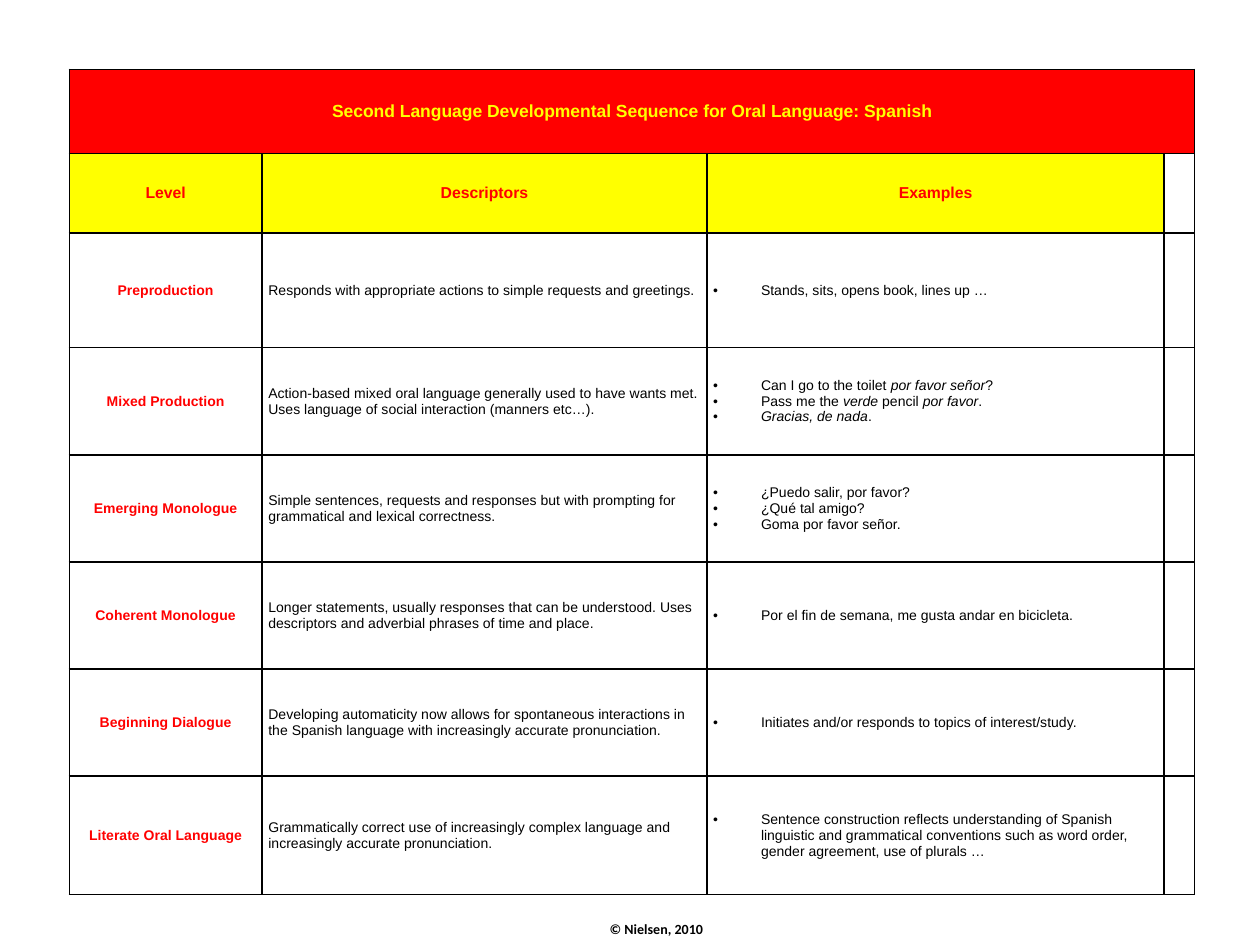
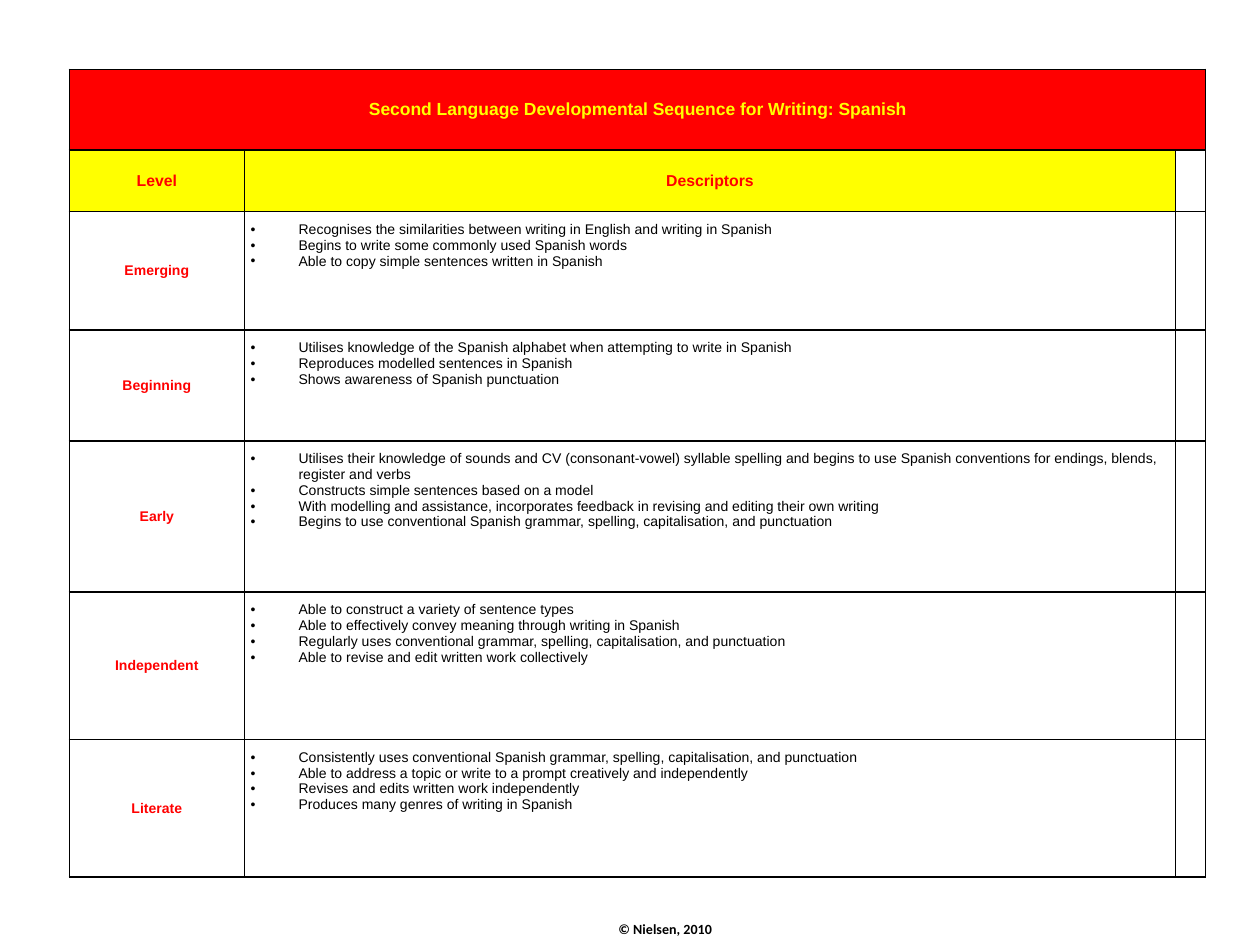
"""Build two slides of developmental sequences for learning Spanish."""
from dataclasses import dataclass

from lxml import etree
from pptx import Presentation
from pptx.dml.color import RGBColor
from pptx.enum.text import MSO_ANCHOR, MSO_AUTO_SIZE, PP_ALIGN
from pptx.oxml.ns import qn
from pptx.slide import Slide
from pptx.table import _Cell
from pptx.text.text import TextFrame
from pptx.util import Emu, Inches, Pt

CENTER, LEFT = PP_ALIGN.CENTER, PP_ALIGN.LEFT
MIDDLE, TOP = MSO_ANCHOR.MIDDLE, MSO_ANCHOR.TOP
FIT_SHAPE = MSO_AUTO_SIZE.SHAPE_TO_FIT_TEXT

SLIDE_WIDTH, SLIDE_HEIGHT = Inches(10), Inches(7.5)
GRID_COLUMNS, GRID_ROWS = 1000, 750
BLANK_LAYOUT = 6
TABLE_LEFT, TABLE_TOP = 55, 55
FOOTER_TOP, FOOTER_WIDTH, FOOTER_HEIGHT = 726, 143, 24
FOOTER_INDENT = 39
CELL_MARGIN, BULLET_INDENT, LIST_TOP = 5, 38, 8
MARGIN_COLUMN = 21
FOOTER = "© Nielsen, 2010"


@dataclass(frozen=True)
class Theme:
    """Colours, fonts and type sizes of the deck."""

    red: RGBColor = RGBColor(0xFF, 0x00, 0x00)
    yellow: RGBColor = RGBColor(0xFF, 0xFF, 0x00)
    black: RGBColor = RGBColor(0x00, 0x00, 0x00)
    table_font: str = "Arial"
    footer_font: str = "Calibri"
    title_size: int = 10
    heading_size: int = 9
    body_size: int = 8
    border_width: int = 1


THEME = Theme()


@dataclass(frozen=True)
class TextStyle:
    """Look of the text in one kind of box or cell."""

    size: int
    color: RGBColor
    bold: bool = True
    font: str = THEME.table_font
    align: PP_ALIGN = CENTER
    bulleted: bool = False


TITLE = TextStyle(THEME.title_size, THEME.yellow)
HEADING = TextStyle(THEME.heading_size, THEME.red)
LEVEL = TextStyle(THEME.body_size, THEME.red)
BODY = TextStyle(THEME.body_size, THEME.black, bold=False, align=LEFT)
BULLETS = TextStyle(THEME.body_size, THEME.black, bold=False, align=LEFT, bulleted=True)
FOOTNOTE = TextStyle(THEME.body_size, THEME.black, font=THEME.footer_font)


@dataclass(frozen=True)
class Level:
    """One table row: its height, name, bullet items and optional description."""

    height: int
    name: str
    items: tuple[str, ...]
    description: str = ""


@dataclass(frozen=True)
class Sequence:
    """One slide: a titled table of levels and a footer."""

    title: str
    headings: tuple[str, ...]
    widths: tuple[int, ...]
    title_height: int
    heading_height: int
    footer_left: int
    list_anchor: MSO_ANCHOR
    levels: tuple[Level, ...]


ORAL = Sequence(
    "Second Language Developmental Sequence for Oral Language: Spanish",
    ("Level", "Descriptors", "Examples"), (153, 353, 363, MARGIN_COLUMN),
    67, 63, 430, MIDDLE,
    (
        Level(91, "Preproduction", ("Stands, sits, opens book, lines up …",),
              "Responds with appropriate actions to simple requests and greetings."),
        Level(85, "Mixed Production",
              ("Can I go to the toilet *por favor señor*?",
               "Pass me the *verde* pencil *por favor*.",
               "*Gracias, de nada*."),
              "Action-based mixed oral language generally used to have wants met. "
              "Uses language of social interaction (manners etc…)."),
        Level(85, "Emerging Monologue",
              ("¿Puedo salir, por favor?", "¿Qué tal amigo?", "Goma por favor señor."),
              "Simple sentences, requests and responses but with prompting for "
              "grammatical and lexical correctness."),
        Level(85, "Coherent Monologue",
              ("Por el fin de semana, me gusta andar en bicicleta.",),
              "Longer statements, usually responses that can be understood. "
              "Uses descriptors and adverbial phrases of time and place."),
        Level(85, "Beginning Dialogue",
              ("Initiates and/or responds to topics of interest/study.",),
              "Developing automaticity now allows for spontaneous interactions in the "
              "Spanish language with increasingly accurate pronunciation."),
        Level(94, "Literate Oral Language",
              ("Sentence construction reflects understanding of Spanish linguistic and "
               "grammatical conventions such as word order, gender agreement, "
               "use of plurals …",),
              "Grammatically correct use of increasingly complex language and "
              "increasingly accurate pronunciation."),
    ),
)

WRITING = Sequence(
    "Second Language Developmental Sequence for Writing: Spanish",
    ("Level", "Descriptors"), (139, 739, MARGIN_COLUMN),
    64, 49, 437, TOP,
    (
        Level(94, "Emerging",
              ("Recognises the similarities between writing in English and writing in Spanish",
               "Begins to write some commonly used Spanish words",
               "Able to copy simple sentences written in Spanish")),
        Level(88, "Beginning",
              ("Utilises knowledge of the Spanish alphabet when attempting to write in Spanish",
               "Reproduces modelled sentences in Spanish",
               "Shows awareness of Spanish punctuation")),
        Level(120, "Early",
              ("Utilises their knowledge of sounds and CV (consonant-vowel) syllable spelling "
               "and begins to use Spanish conventions for endings, blends, register and verbs",
               "Constructs simple sentences based on a model",
               "With modelling and assistance, incorporates feedback in revising and editing "
               "their own writing",
               "Begins to use conventional Spanish grammar, spelling, capitalisation, "
               "and punctuation")),
        Level(117, "Independent",
              ("Able to construct a variety of sentence types",
               "Able to effectively convey meaning through writing in Spanish",
               "Regularly uses conventional grammar, spelling, capitalisation, and punctuation",
               "Able to revise and edit written work collectively")),
        Level(109, "Literate",
              ("Consistently uses conventional Spanish grammar, spelling, capitalisation, "
               "and punctuation",
               "Able to address a topic or write to a prompt creatively and independently",
               "Revises and edits written work independently",
               "Produces many genres of writing in Spanish")),
    ),
)


def across(columns: int) -> Emu:
    """Return the width of a number of grid columns."""
    return Emu(SLIDE_WIDTH * columns // GRID_COLUMNS)


def down(rows: int) -> Emu:
    """Return the height of a number of grid rows."""
    return Emu(SLIDE_HEIGHT * rows // GRID_ROWS)


def write(frame: TextFrame, lines: tuple[str, ...], style: TextStyle) -> None:
    """Write one paragraph per line, with italics between asterisks."""
    for index, line in enumerate(lines):
        para = frame.add_paragraph() if index else frame.paragraphs[0]
        if style.bulleted:
            properties = para._p.get_or_add_pPr()
            properties.set("marL", str(across(BULLET_INDENT)))
            properties.set("indent", str(-across(BULLET_INDENT)))
            etree.SubElement(properties, qn("a:buFont"), typeface=style.font)
            etree.SubElement(properties, qn("a:buChar"), char="•")
        para.alignment = style.align
        para.font.name = style.font
        para.font.size = Pt(style.size)
        para.font.bold = style.bold
        para.font.color.rgb = style.color
        for position, piece in enumerate(line.split("*")):
            if piece:
                span = para.add_run()
                span.text = piece
                if position % 2:
                    span.font.italic = True


def draw_borders(cell: _Cell) -> None:
    """Draw a thin line on each side of a cell."""
    properties = cell._tc.get_or_add_tcPr()
    for index, side in enumerate(("lnL", "lnR", "lnT", "lnB")):
        line = etree.Element(qn(f"a:{side}"), w=str(Pt(THEME.border_width)))
        fill = etree.SubElement(line, qn("a:solidFill"))
        etree.SubElement(fill, qn("a:srgbClr"), val=str(THEME.black))
        properties.insert(index, line)


def fill_cell(cell: _Cell, lines: tuple[str, ...], style: TextStyle,
              color: RGBColor | None = None, anchor: MSO_ANCHOR = MIDDLE) -> None:
    """Set the text, placement and fill of a cell."""
    cell.vertical_anchor = anchor
    cell.margin_left = cell.margin_right = across(CELL_MARGIN)
    cell.margin_top = down(LIST_TOP) if anchor == TOP else 0
    cell.margin_bottom = 0
    if color is not None:
        cell.fill.solid()
        cell.fill.fore_color.rgb = color
    write(cell.text_frame, lines, style)


def draw_table(page: Slide, sequence: Sequence) -> None:
    """Draw the title, headings and levels as one table."""
    heights = (sequence.title_height, sequence.heading_height,
               *(level.height for level in sequence.levels))
    table = page.shapes.add_table(
        len(heights), len(sequence.widths), across(TABLE_LEFT), down(TABLE_TOP),
        across(sum(sequence.widths)), down(sum(heights))).table
    table.first_row = table.horz_banding = False
    for column, width in zip(table.columns, sequence.widths):
        column.width = across(width)
    for row, height in zip(table.rows, heights):
        row.height = down(height)
    for cell in (cell for row in table.rows for cell in row.cells):
        cell.fill.background()
        draw_borders(cell)

    table.cell(0, 0).merge(table.cell(0, len(sequence.widths) - 1))
    fill_cell(table.cell(0, 0), (sequence.title,), TITLE, THEME.red)
    for column, heading in enumerate(sequence.headings):
        fill_cell(table.cell(1, column), (heading,), HEADING, THEME.yellow)
    list_column = len(sequence.headings) - 1
    for row, level in enumerate(sequence.levels, start=2):
        fill_cell(table.cell(row, 0), (level.name,), LEVEL)
        if level.description:
            fill_cell(table.cell(row, 1), (level.description,), BODY)
        fill_cell(table.cell(row, list_column), level.items, BULLETS,
                  anchor=sequence.list_anchor)


def draw_footer(page: Slide, left: int) -> None:
    """Draw the copyright line."""
    box = page.shapes.add_textbox(across(left), down(FOOTER_TOP),
                                  across(FOOTER_WIDTH), down(FOOTER_HEIGHT))
    frame = box.text_frame
    frame.word_wrap = False
    frame.auto_size = FIT_SHAPE
    write(frame, (FOOTER,), FOOTNOTE)
    frame.paragraphs[0]._p.get_or_add_pPr().set("marL", str(across(FOOTER_INDENT)))


def main() -> None:
    """Build and save the deck."""
    deck = Presentation()
    deck.slide_width, deck.slide_height = SLIDE_WIDTH, SLIDE_HEIGHT
    for sequence in (ORAL, WRITING):
        page = deck.slides.add_slide(deck.slide_layouts[BLANK_LAYOUT])
        draw_table(page, sequence)
        draw_footer(page, sequence.footer_left)
    deck.save("out.pptx")


if __name__ == "__main__":
    main()
